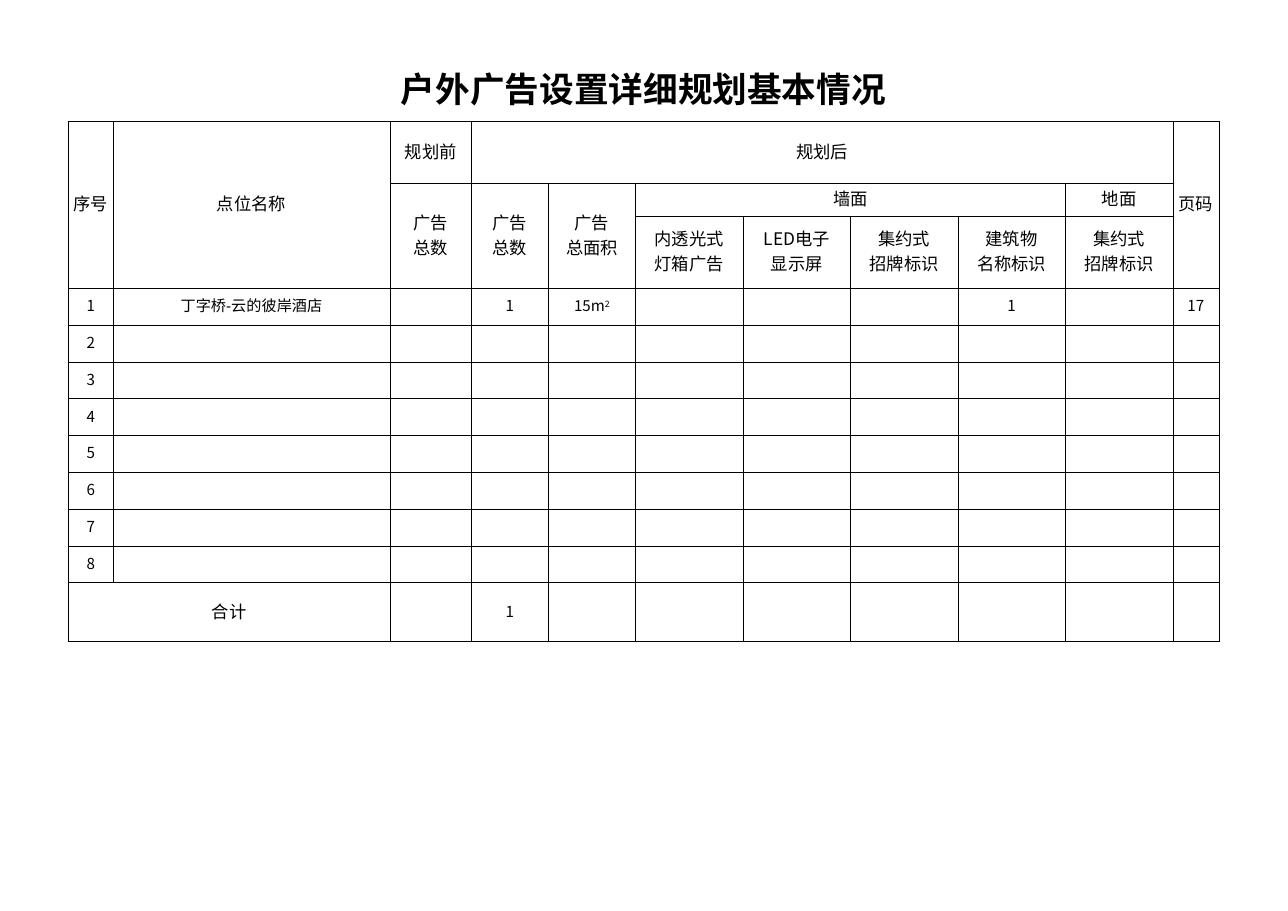
from lxml import etree
from pptx import Presentation
from pptx.dml.color import RGBColor
from pptx.enum.text import MSO_ANCHOR, PP_ALIGN
from pptx.oxml.ns import qn
from pptx.util import Pt

MIDDLE = MSO_ANCHOR.MIDDLE
CENTER = PP_ALIGN.CENTER
BLACK = RGBColor(0, 0, 0)
WHITE = RGBColor(255, 255, 255)
SANS = "Noto Sans CJK SC"
LATIN = "Arial"

COLS = [41.3, 255.8, 75.3, 71.2, 80.5] + [99.3] * 5 + [42.5]
ROWS = [60, 57, 30.5, 66.5] + [34] * 8 + [54.5]
FIRST = 4
TOTAL = len(ROWS) - 1

HEADS = [
    (1, 0, 3, 1, "序号"),
    (1, 1, 3, 1, "点位名称"),
    (1, 2, 1, 1, "规划前"),
    (1, 3, 1, 7, "规划后"),
    (1, 10, 3, 1, "页码"),
    (2, 2, 2, 1, "广告\n总数"),
    (2, 3, 2, 1, "广告\n总数"),
    (2, 4, 2, 1, "广告\n总面积"),
    (2, 5, 1, 4, "墙面"),
    (2, 9, 1, 1, "地面"),
    (3, 5, 1, 1, "内透光式\n灯箱广告"),
    (3, 6, 1, 1, "LED电子\n显示屏"),
    (3, 7, 1, 1, "集约式\n招牌标识"),
    (3, 8, 1, 1, "建筑物\n名称标识"),
    (3, 9, 1, 1, "集约式\n招牌标识"),
    (TOTAL, 0, 1, 2, "合计"),
]


class Sheet:
    """Holds the text style and the current slide, and draws the plan table."""

    def __init__(self, deck):
        self.slide = deck.slides.add_slide(deck.slide_layouts[6])
        self.frame = {
            "vertical_anchor": MIDDLE,
            "margin_left": Pt(0.75),
            "margin_top": Pt(0.75),
            "margin_right": Pt(0.75),
            "margin_bottom": Pt(3.6),
        }

    def grid(self, left, top):
        shape = self.slide.shapes.add_table(
            len(ROWS), len(COLS), Pt(left), Pt(top), Pt(sum(COLS)), Pt(sum(ROWS)))
        self.table = shape.table
        self.table.first_row = False
        self.table.horz_banding = False
        for col, width in zip(self.table.columns, COLS):
            col.width = Pt(width)
        for num, (row, height) in enumerate(zip(self.table.rows, ROWS)):
            row.height = Pt(height)
            for cell in row.cells:
                self.edge(cell, "B" if num == 0 else "LRTB")
                cell.fill.solid()
                cell.fill.fore_color.rgb = WHITE
                for key, value in self.frame.items():
                    setattr(cell, key, value)

    def edge(self, cell, sides):
        props = cell._tc.get_or_add_tcPr()
        for side in "LRTB":
            line = etree.SubElement(props, qn("a:ln" + side), w=str(Pt(0.5)))
            if side in sides:
                fill = etree.SubElement(line, qn("a:solidFill"))
                etree.SubElement(fill, qn("a:srgbClr"), val=str(BLACK))
            else:
                etree.SubElement(line, qn("a:noFill"))

    def run(self, para, text, size, bold=False, face=SANS):
        run = para.add_run()
        run.text = text
        for key, value in {"size": Pt(size), "bold": bold, "name": face}.items():
            setattr(run.font, key, value)
        run.font.color.rgb = BLACK
        props = run._r.get_or_add_rPr()
        etree.SubElement(props, qn("a:ea"), typeface=SANS)
        return props

    def label(self, row, col, text, size=14, sup="", **style):
        frame = self.table.cell(row, col).text_frame
        for num, line in enumerate(text.split("\n")):
            para = frame.add_paragraph() if num else frame.paragraphs[0]
            para.alignment = CENTER
            self.run(para, line, size, **style)
        if sup:
            self.run(para, sup, size, **style).set("baseline", "30000")

    def span(self, row, col, high, wide, text, **style):
        if high * wide > 1:
            end = self.table.cell(row + high - 1, col + wide - 1)
            self.table.cell(row, col).merge(end)
        self.label(row, col, text, **style)


def main():
    deck = Presentation()
    deck.slide_width = Pt(1190.16)
    deck.slide_height = Pt(841.68)
    sheet = Sheet(deck)
    sheet.grid(63.2, 52.4)
    sheet.span(0, 0, 1, len(COLS), "户外广告设置详细规划基本情况", size=32, bold=True)
    for head in HEADS:
        sheet.span(*head, size=16)
    for num, row in enumerate(range(FIRST, TOTAL), 1):
        sheet.label(row, 0, str(num))
    sheet.label(FIRST, 1, "丁字桥-云的彼岸酒店", face=LATIN)
    sheet.label(FIRST, 4, "15m", sup="2")
    for row, col, text in [(FIRST, 3, "1"), (FIRST, 8, "1"),
                           (FIRST, 10, "17"), (TOTAL, 3, "1")]:
        sheet.label(row, col, text)
    deck.save("out.pptx")


if __name__ == "__main__":
    main()
